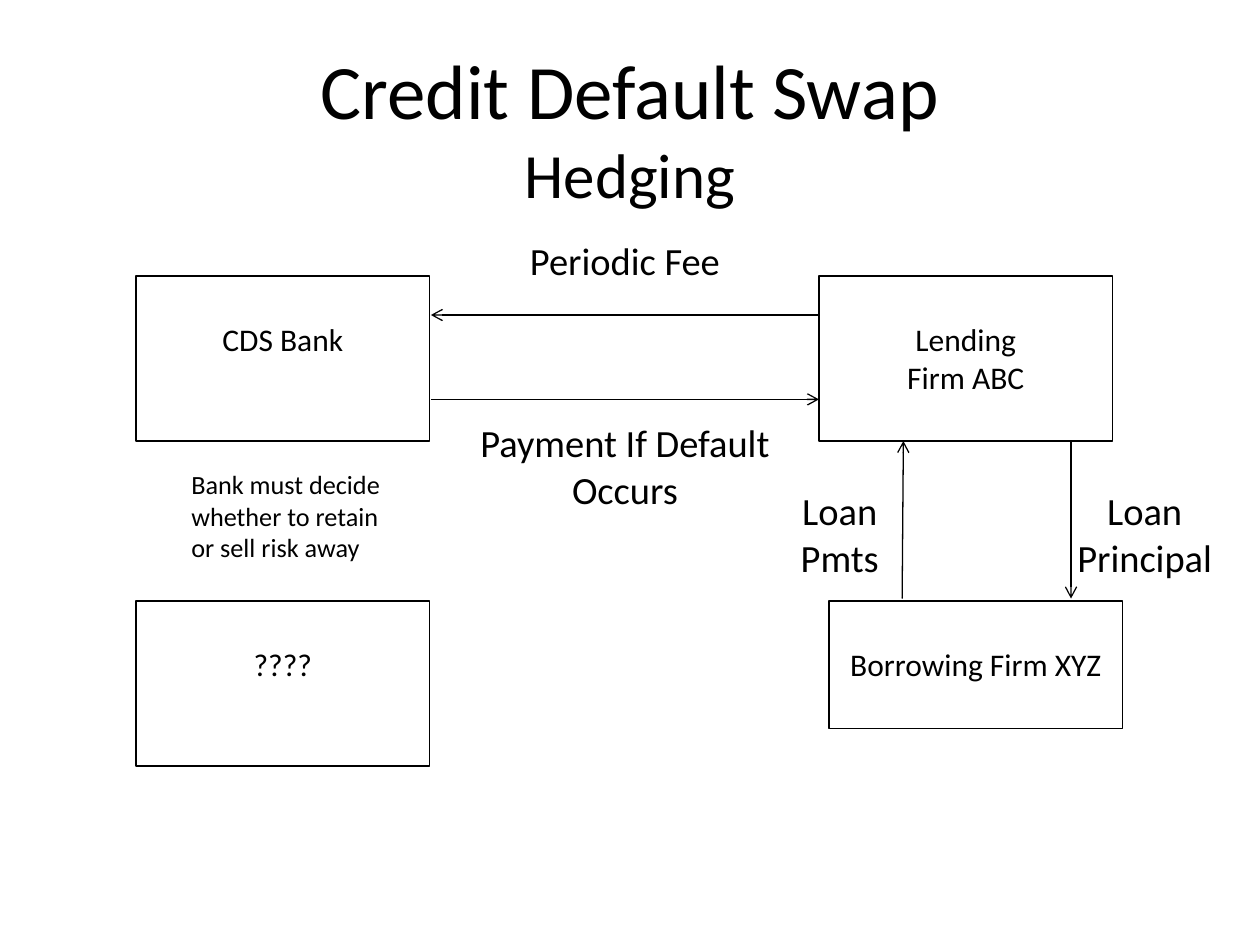
from lxml.etree import SubElement
from pptx import Presentation
from pptx.dml.color import RGBColor
from pptx.enum.shapes import MSO_CONNECTOR, MSO_SHAPE
from pptx.enum.text import MSO_ANCHOR, MSO_AUTO_SIZE, PP_ALIGN
from pptx.oxml.ns import qn
from pptx.util import Inches, Pt

BLACK = "000000"
LEFT_COLUMN, RIGHT_COLUMN = 1.08, 6.5
BOX_WIDTH, BOX_HEIGHT = 2.33, 1.31
TOP_ROW, BOTTOM_ROW = 2.19, 4.77


def paint(color_format, color):
    """Set a colour from a hex string."""
    color_format.rgb = RGBColor.from_string(color)


def style_paragraph(paragraph, size, align):
    """Apply the slide's font and alignment to a paragraph."""
    paragraph.alignment = align
    paragraph.font.name = "Calibri"
    paragraph.font.size = Pt(size)
    paint(paragraph.font.color, BLACK)


def write_text(frame, text, size, align=PP_ALIGN.CENTER):
    """Fill a text frame from the top with styled paragraphs."""
    frame.word_wrap = True
    frame.vertical_anchor = MSO_ANCHOR.TOP
    frame.text = text
    for paragraph in frame.paragraphs:
        style_paragraph(paragraph, size, align)


def set_title(slide, heading, subheading):
    """Place the two-line title with a smaller second line."""
    title = slide.shapes.title
    title.left, title.top = Inches(0.75), Inches(0.42)
    title.width, title.height = Inches(8.5), Inches(1.17)
    frame = title.text_frame
    frame.auto_size = MSO_AUTO_SIZE.NONE
    frame.vertical_anchor = MSO_ANCHOR.MIDDLE
    frame.text = f"{heading}\v{subheading}"
    paragraph = frame.paragraphs[0]
    style_paragraph(paragraph, 44, PP_ALIGN.CENTER)
    paragraph.runs[1].font.size = Pt(36)


def add_party(slide, text, left, top, height=BOX_HEIGHT):
    """Add an outlined box for one party to the swap."""
    party = slide.shapes.add_shape(
        MSO_SHAPE.RECTANGLE, Inches(left), Inches(top), Inches(BOX_WIDTH), Inches(height)
    )
    party.shadow.inherit = False
    party.fill.background()
    paint(party.line.color, BLACK)
    party.line.width = Pt(0.75)
    write_text(party.text_frame, text, 18)
    party.text_frame.margin_top = Inches(0.35)


def add_label(slide, text, left, top, width, height, size=22, align=PP_ALIGN.CENTER):
    """Add a free-standing wrapped label."""
    label = slide.shapes.add_textbox(
        Inches(left), Inches(top), Inches(width), Inches(height)
    )
    write_text(label.text_frame, text, size, align)


def add_flow(slide, start, end):
    """Add an arrow for a payment from start to end."""
    flow = slide.shapes.add_connector(
        MSO_CONNECTOR.STRAIGHT, *(Inches(value) for value in (*start, *end))
    )
    paint(flow.line.color, BLACK)
    flow.line.width = Pt(0.75)
    SubElement(flow.line._get_or_add_ln(), qn("a:tailEnd"), type="arrow")
    SubElement(flow._element.spPr, qn("a:effectLst"))


def main():
    """Build the credit default swap slide."""
    deck = Presentation()
    deck.slide_width, deck.slide_height = Inches(10), Inches(7.5)
    slide = deck.slides.add_slide(deck.slide_layouts[5])
    set_title(slide, "Credit Default Swap", "Hedging")

    add_party(slide, "CDS Bank", LEFT_COLUMN, TOP_ROW)
    add_party(slide, "Lending\nFirm ABC", RIGHT_COLUMN, TOP_ROW)
    add_party(slide, "????", LEFT_COLUMN, BOTTOM_ROW)
    add_party(slide, "Borrowing Firm XYZ", 6.58, BOTTOM_ROW, 1.01)

    bank_edge = 3.42
    add_flow(slide, (bank_edge, 3.17), (RIGHT_COLUMN, 3.17))
    add_flow(slide, (RIGHT_COLUMN, 2.5), (bank_edge, 2.5))
    add_flow(slide, (8.5, 3.5), (8.5, 4.75))
    add_flow(slide, (7.16, 4.75), (7.17, 3.5))

    add_label(slide, "Periodic Fee", 3.75, 1.83, 2.42, 0.47)
    add_label(slide, "Payment If Default Occurs", bank_edge, 3.28, 3.08, 0.84)
    add_label(slide, "Loan Principal", 8.42, 3.82, 1.33, 0.84)
    add_label(slide, "Loan Pmts", 6, 3.82, 1.33, 0.84)
    add_label(slide, "Bank must decide whether to retain or sell risk away",
              1.42, 3.67, 1.83, 0.86, 15, PP_ALIGN.LEFT)
    deck.save("out.pptx")


if __name__ == "__main__":
    main()
